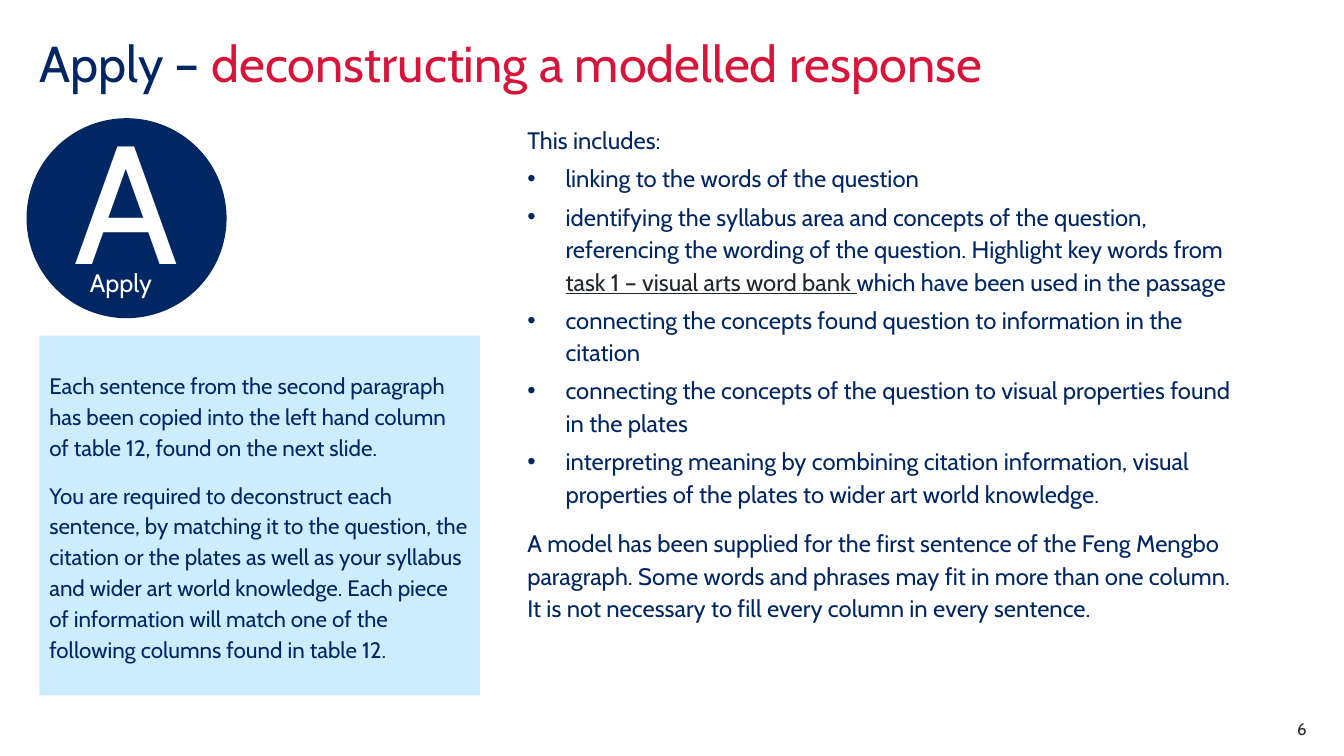
from dataclasses import dataclass

from lxml.etree import SubElement
from pptx import Presentation
from pptx.dml.color import RGBColor
from pptx.enum.shapes import MSO_SHAPE
from pptx.enum.text import MSO_ANCHOR, MSO_AUTO_SIZE, PP_ALIGN
from pptx.oxml.ns import qn
from pptx.util import Inches, Pt

WIDE, HIGH = Inches(13.33), Inches(7.5)


@dataclass(frozen=True)
class Theme:
    font: str = "Cabin"
    navy: str = "002664"
    red: str = "D7153A"
    sky: str = "CBEDFD"
    ink: str = "22272B"
    white: str = "FFFFFF"
    title: int = 36
    letter: int = 120
    label: int = 18
    note: int = 16
    body: int = 17
    page: int = 12


THEME = Theme()

NOTES = [
    "Each sentence from the second paragraph has been copied into the left "
    "hand column of table 12, found on the next slide.",
    "You are required to deconstruct each sentence, by matching it to the "
    "question, the citation or the plates as well as your syllabus and wider "
    "art world knowledge. Each piece of information will match one of the "
    "following columns found in table 12.",
]
INTRO = "This includes:"
STEPS = [
    ["linking to the words of the question"],
    ["identifying the syllabus area and concepts of the question, referencing "
     "the wording of the question. Highlight key words from ",
     "task 1 – visual arts word bank ",
     "which have been used in the passage"],
    ["connecting the concepts found question to information in the citation"],
    ["connecting the concepts of the question to visual properties found in "
     "the plates"],
    ["interpreting meaning by combining citation information, visual "
     "properties of the plates to wider art world knowledge."],
]
CLOSE = ("A model has been supplied for the first sentence of the Feng Mengbo "
         "paragraph. Some words and phrases may fit in more than one column. "
         "It is not necessary to fill every column in every sentence.")


def area(left, top, width, height):
    """Turn percentages of the slide into lengths."""
    return [int(share * side / 100) for share, side in
            zip((left, top, width, height), (WIDE, HIGH, WIDE, HIGH))]


def move(shape, box):
    shape.left, shape.top, shape.width, shape.height = box


def frame(shape, anchor=MSO_ANCHOR.TOP, inset=None):
    text = shape.text_frame
    text.word_wrap = True
    text.auto_size = MSO_AUTO_SIZE.NONE
    text.vertical_anchor = anchor
    if inset is not None:
        text.margin_left = text.margin_right = inset
        text.margin_top = text.margin_bottom = inset
    return text


def style(run, size, color):
    run.font.name = THEME.font
    run.font.size = Pt(size)
    run.font.color.rgb = RGBColor.from_string(color)


def write(para, parts, size, color=THEME.navy, align=PP_ALIGN.LEFT,
          lines=None, before=0):
    para.alignment = align
    para.space_before = Pt(before)
    if lines:
        para.line_spacing = lines
    for part in parts:
        run = para.add_run()
        run.text = part
        style(run, size, color)
    return para.runs


def next_para(text, index):
    return text.add_paragraph() if index else text.paragraphs[0]


def mark(para, bullet):
    """Give the paragraph a hanging bullet, or none."""
    props = para._p.get_or_add_pPr()
    hang = Inches(0.38) if bullet else 0
    props.set("marL", str(hang))
    props.set("indent", str(-hang))
    if bullet:
        SubElement(props, qn("a:buFont")).set("typeface", "Arial")
        SubElement(props, qn("a:buChar")).set("char", "•")
    else:
        SubElement(props, qn("a:buNone"))


def add_panel(shapes, kind, box, fill):
    panel = shapes.add_shape(kind, *box)
    panel.shadow.inherit = False
    panel.fill.solid()
    panel.fill.fore_color.rgb = RGBColor.from_string(fill)
    panel.line.fill.background()
    return panel


def add_label(shapes, box, words, size, color, align=PP_ALIGN.LEFT):
    text = frame(shapes.add_textbox(*box), inset=0)
    write(text.paragraphs[0], [words], size, color, align)


def fill_title(title):
    move(title, area(2.93, 5.2, 82.67, 14.67))
    text = frame(title, inset=0)
    runs = write(text.paragraphs[0],
                 ["Apply – ", "deconstructing a modelled response"],
                 THEME.title, lines=0.9)
    runs[1].font.color.rgb = RGBColor.from_string(THEME.red)


def add_badge(slide):
    shapes = slide.shapes.add_group_shape().shapes
    disc = add_panel(shapes, MSO_SHAPE.OVAL,
                     area(2.03, 15.73, 14.78, 26.27), THEME.navy)
    disc.line.color.rgb = RGBColor.from_string(THEME.navy)
    disc.line.width = Pt(1)
    text = frame(disc, MSO_ANCHOR.MIDDLE)
    text.margin_bottom = Inches(0.46)
    write(text.paragraphs[0], ["A"], THEME.letter, THEME.white,
          PP_ALIGN.CENTER)
    add_label(shapes, area(6.68, 35.33, 5.48, 6.4), "Apply", THEME.label,
              THEME.white)


def add_note(slide):
    panel = add_panel(slide.shapes, MSO_SHAPE.RECTANGLE,
                      area(2.93, 44.4, 32.78, 47.6), THEME.sky)
    text = frame(panel, MSO_ANCHOR.MIDDLE)
    for index, words in enumerate(NOTES):
        write(next_para(text, index), [words], THEME.note, lines=1.15,
              before=12 if index else 0)


def fill_body(body):
    move(body, area(38.48, 15.47, 54.91, 76.53))
    text = frame(body)
    rows = [([INTRO], False, 0), *((step, True, 4) for step in STEPS),
            ([CLOSE], False, 12)]
    for index, (parts, bullet, before) in enumerate(rows):
        para = next_para(text, index)
        mark(para, bullet)
        runs = write(para, parts, THEME.body, lines=1.14, before=before)
        for run in runs[1:2]:
            run.font.underline = True
            run.font.color.rgb = RGBColor.from_string(THEME.ink)


def main():
    deck = Presentation()
    deck.slide_width, deck.slide_height = WIDE, HIGH
    slide = deck.slides.add_slide(deck.slide_layouts[1])
    fill_title(slide.shapes.title)
    add_badge(slide)
    add_note(slide)
    fill_body(slide.placeholders[1])
    add_label(slide.shapes, area(91.3, 95.07, 5.93, 2.67), "6", THEME.page,
              THEME.ink, PP_ALIGN.RIGHT)
    deck.save("out.pptx")


if __name__ == "__main__":
    main()
